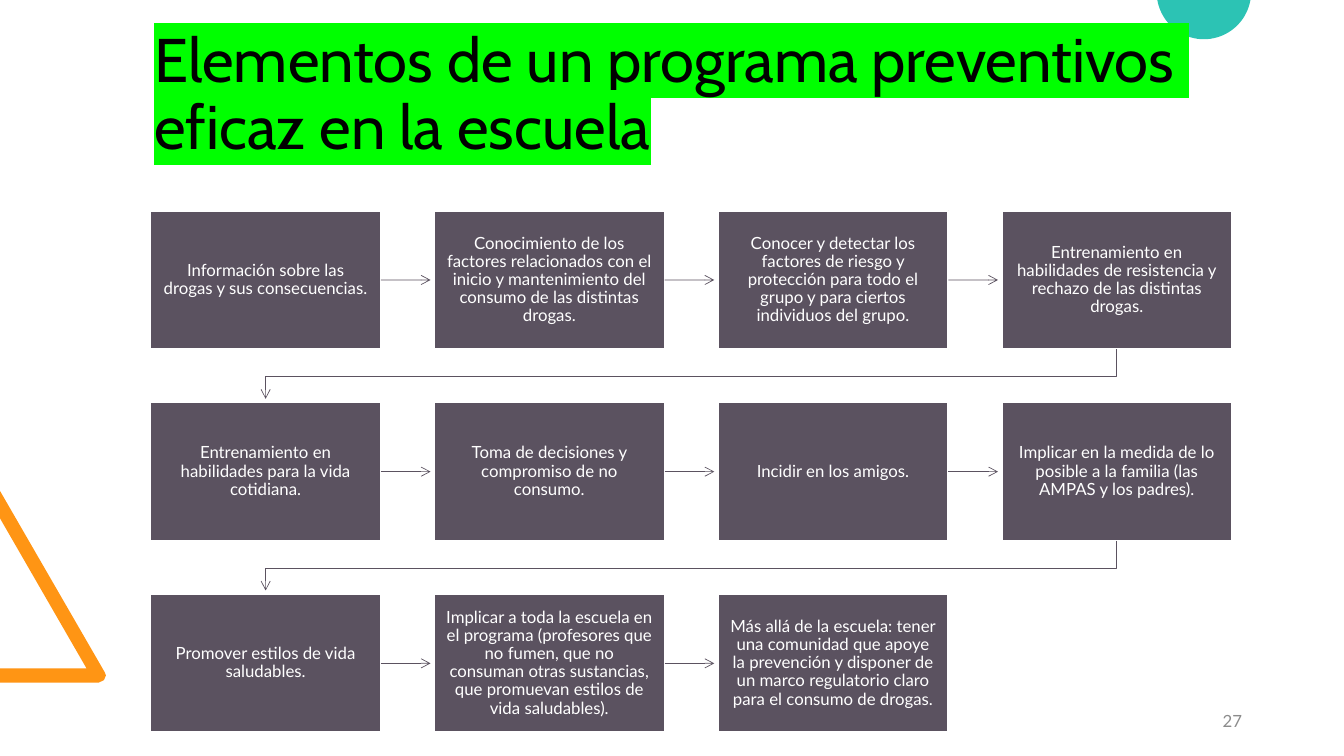
import math

import pptx
import pptx.dml.color
import pptx.enum.shapes
import pptx.enum.text
import pptx.oxml.ns
import pptx.util
from lxml import etree

Cm = pptx.util.Cm
Pt = pptx.util.Pt
RGBColor = pptx.dml.color.RGBColor
qn = pptx.oxml.ns.qn
ALIGN = pptx.enum.text.PP_ALIGN
MIDDLE = pptx.enum.text.MSO_ANCHOR.MIDDLE

ORANGE = RGBColor(0xFF, 0x95, 0x14)
TEAL = RGBColor(0x2C, 0xC3, 0xB4)
PLUM = RGBColor(0x5B, 0x52, 0x60)
GRAY = RGBColor(0x8C, 0x8C, 0x8C)
WHITE = RGBColor(0xFF, 0xFF, 0xFF)
BLACK = RGBColor(0x00, 0x00, 0x00)

STEPS = [
    "Información sobre las drogas y sus consecuencias.",
    "Conocimiento de los factores relacionados con el inicio y mantenimiento "
    "del consumo de las distintas drogas.",
    "Conocer y detectar los factores de riesgo y protección para todo el grupo "
    "y para ciertos individuos del grupo.",
    "Entrenamiento en habilidades de resistencia y rechazo de las distintas drogas.",
    "Entrenamiento en habilidades para la vida cotidiana.",
    "Toma de decisiones y compromiso de no consumo.",
    "Incidir en los amigos.",
    "Implicar en la medida de lo posible a la familia (las AMPAS y los padres).",
    "Promover estilos de vida saludables.",
    "Implicar a toda la escuela en el programa (profesores que no fumen, que no "
    "consuman otras sustancias, que promuevan estilos de vida saludables).",
    "Más allá de la escuela: tener una comunidad que apoye la prevención y "
    "disponer de un marco regulatorio claro para el consumo de drogas.",
]
COLUMNS = 4
LEFT, TOP = 3.79, 5.31
WIDTH, HEIGHT = 5.81, 3.49
STEP_X, STEP_Y = 7.15, 4.83
GAP = 0.09  # between an arrow tip and the next box


def add_outline(shapes, points, close):
    points = [(Cm(x), Cm(y)) for x, y in points]
    builder = shapes.build_freeform(*points[0])
    builder.add_line_segments(points[1:], close=close)
    return builder.convert_to_shape()


def style_arrow(sp):
    sp.line.color.rgb = PLUM
    sp.line.width = Pt(0.5)
    spPr = sp._element.spPr
    etree.SubElement(spPr.find(qn("a:ln")), qn("a:tailEnd"), type="arrow")
    etree.SubElement(spPr, qn("a:effectLst"))


prs = pptx.Presentation()
prs.slide_width, prs.slide_height = Cm(33.87), Cm(19.05)
s = prs.slides.add_slide(prs.slide_layouts[5])

# Corner decorations
triangle = [(0, 17.2), (0, 16.84), (2.18, 16.84), (0, 13.06), (0, 12.37),
            (2.64, 16.94), (2.67, 17.02), (2.62, 17.14), (2.49, 17.2)]
start = math.asin(0.2 / 1.19)
angles = [start + (math.pi - 2 * start) * i / 40 for i in range(41)]
circle = [(30.34 + 1.19 * math.cos(a), 1.19 * math.sin(a) - 0.2) for a in angles]
for points, color in ((triangle, ORANGE), (circle, TEAL)):
    sp = add_outline(s.shapes, points, True)
    sp.fill.solid()
    sp.fill.fore_color.rgb = color
    sp.line.fill.background()
    sp.shadow.inherit = False

# Title, in front of the circle
title = s.shapes.title
s.shapes._spTree.append(title._element)
title.left, title.top, title.width, title.height = Cm(3.63), Cm(0.58), Cm(29.2), Cm(3.68)
tf = title.text_frame
tf.text = "Elementos de un programa preventivos \veficaz en la escuela"
tf.word_wrap = True
tf.auto_size = pptx.enum.text.MSO_AUTO_SIZE.NONE
tf.vertical_anchor = MIDDLE
p = tf.paragraphs[0]
p.alignment = ALIGN.LEFT
p.line_spacing = 0.9
p.font.size = Pt(44)
p.font.name = "Cabin"
p.font.color.rgb = BLACK
for r in p.runs:
    highlight = etree.SubElement(r._r.get_or_add_rPr(), qn("a:highlight"))
    etree.SubElement(highlight, qn("a:srgbClr"), val="00FF00")

# Slide number
sp = s.shapes.add_textbox(Cm(23.93), Cm(17.65), Cm(7.62), Cm(1.02))
tf = sp.text_frame
tf.word_wrap = True
tf.vertical_anchor = MIDDLE
p = tf.paragraphs[0]
p.text = "27"
p.alignment = ALIGN.RIGHT
p.space_after = Pt(6)
p.font.size = Pt(12)
p.font.name = "Lato"
p.font.color.rgb = GRAY

# Steps, each with an arrow to the next one
for i, text in enumerate(STEPS):
    row, col = divmod(i, COLUMNS)
    x, y = LEFT + col * STEP_X, TOP + row * STEP_Y
    box = s.shapes.add_shape(pptx.enum.shapes.MSO_SHAPE.RECTANGLE,
                             Cm(x), Cm(y), Cm(WIDTH), Cm(HEIGHT))
    box.shadow.inherit = False
    box.fill.solid()
    box.fill.fore_color.rgb = PLUM
    box.line.color.rgb = WHITE
    box.line.width = Pt(1.5)
    tf = box.text_frame
    tf.word_wrap = True
    tf.vertical_anchor = MIDDLE
    tf.margin_left = tf.margin_right = Cm(0.28)
    tf.margin_top = tf.margin_bottom = Cm(0.3)
    p = tf.paragraphs[0]
    p.text = text
    p.alignment = ALIGN.CENTER
    p.line_spacing = 0.9
    p.font.size = Pt(12)
    p.font.name = "Lato"
    p.font.color.rgb = WHITE

    if i == len(STEPS) - 1:
        continue
    if col < COLUMNS - 1:
        mid = Cm(y + HEIGHT / 2)
        arrow = s.shapes.add_connector(pptx.enum.shapes.MSO_CONNECTOR.STRAIGHT,
                                       Cm(x + WIDTH), mid, Cm(x + STEP_X - GAP), mid)
        arrow.begin_connect(box, 3)
    else:
        x_from, x_to = x + WIDTH / 2, LEFT + WIDTH / 2
        y_from, y_to = y + HEIGHT, y + STEP_Y - GAP
        y_turn = y_from + 0.69
        arrow = add_outline(s.shapes, [(x_from, y_from), (x_from, y_turn),
                                       (x_to, y_turn), (x_to, y_to)], False)
        arrow.fill.background()
    style_arrow(arrow)

prs.save("out.pptx")
